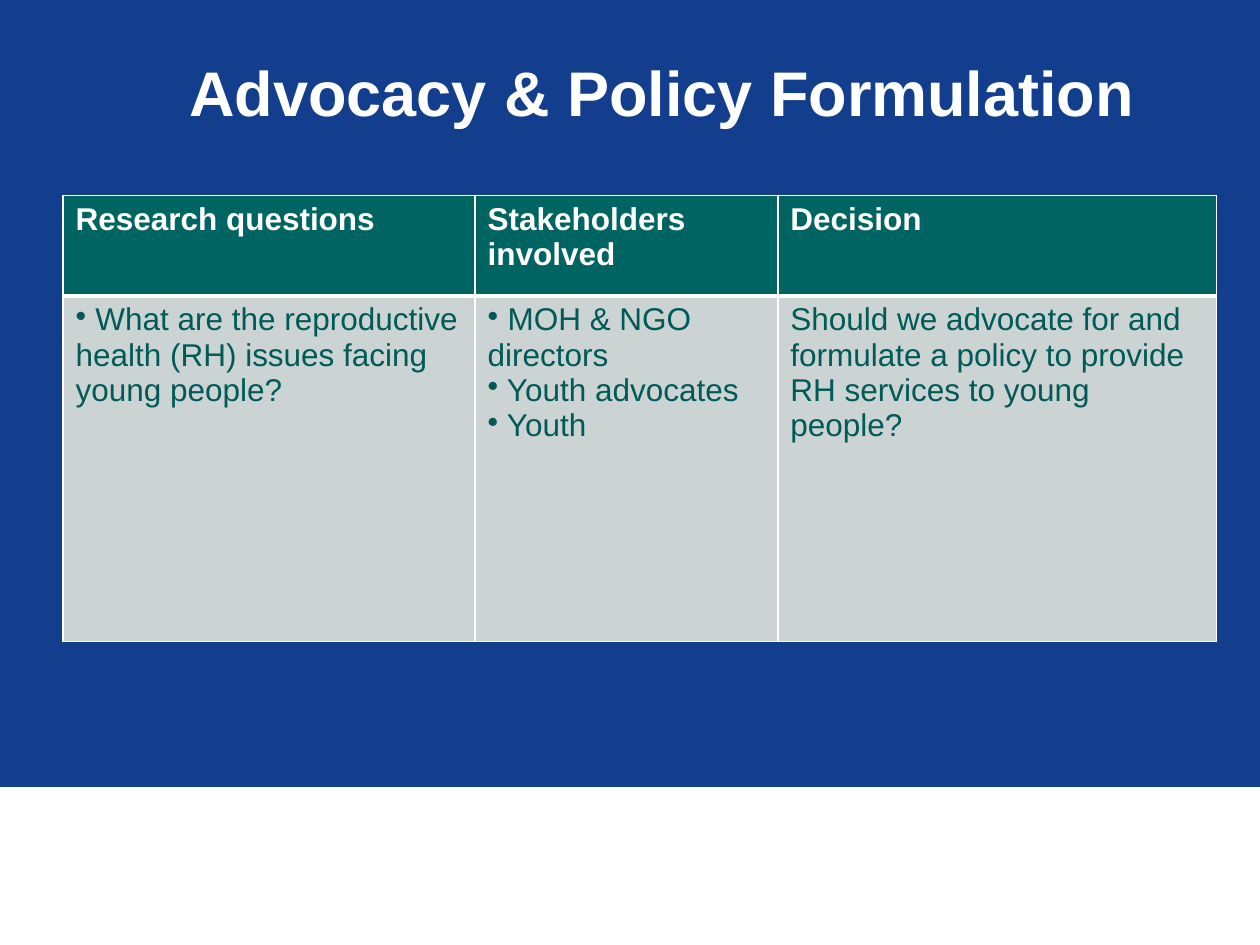
from lxml.etree import SubElement
from pptx import Presentation
from pptx.dml.color import RGBColor
from pptx.enum.shapes import MSO_SHAPE
from pptx.enum.text import MSO_ANCHOR, MSO_AUTO_SIZE, PP_ALIGN
from pptx.oxml.ns import qn
from pptx.util import Pt

BLUE = RGBColor(0x13, 0x3D, 0x8D)
WHITE = RGBColor(0xFF, 0xFF, 0xFF)
GREEN = RGBColor(0x00, 0x64, 0x62)
GRAY = RGBColor(0xCC, 0xD3, 0xD3)
DARK_GREEN = RGBColor(0x00, 0x5A, 0x58)

TITLE_FONT = {"name": "Arial", "size": Pt(36), "bold": True}
HEADER_FONT = {"name": "Arial", "size": Pt(18), "bold": True}
BODY_FONT = {"name": "Arial", "size": Pt(18), "bold": False}

COLUMN_WIDTHS = (235.5, 173, 250.8)
ROW_HEIGHTS = (57.6, 197.3)
HEADERS = ("Research questions", "Stakeholders involved", "Decision")
BODY = (
    (True, ["What are the reproductive health (RH) issues facing young people?"]),
    (True, ["MOH & NGO directors", "Youth advocates", "Youth"]),
    (False, ["Should we advocate for and formulate a policy to provide RH services to young people?"]),
)


def set_attributes(target, values):
    for name, value in values.items():
        setattr(target, name, value)


def format_font(paragraph, values, color):
    set_attributes(paragraph.font, values)
    paragraph.font.color.rgb = color


def add_footer_band(slide, left, top, width, height):
    band = slide.shapes.add_shape(
        MSO_SHAPE.RECTANGLE, Pt(left), Pt(top), Pt(width), Pt(height))
    band.shadow.inherit = False
    band.fill.solid()
    band.fill.fore_color.rgb = WHITE
    band.line.color.rgb = WHITE
    band.line.width = Pt(0.75)


def place_title(slide, left, top, width, height):
    title = slide.shapes.title
    set_attributes(title, {"left": Pt(left), "top": Pt(top),
                           "width": Pt(width), "height": Pt(height)})
    frame = title.text_frame
    frame.text = "Advocacy & Policy Formulation"
    set_attributes(frame, {"word_wrap": True, "auto_size": MSO_AUTO_SIZE.NONE,
                           "vertical_anchor": MSO_ANCHOR.MIDDLE,
                           "margin_bottom": Pt(33)})
    paragraph = frame.paragraphs[0]
    paragraph.alignment = PP_ALIGN.CENTER
    format_font(paragraph, TITLE_FONT, WHITE)


def add_borders(cell, bottom_width):
    properties = cell._tc.get_or_add_tcPr()
    widths = {"a:lnL": 1, "a:lnR": 1, "a:lnT": 1, "a:lnB": bottom_width}
    for tag, width in widths.items():
        line = SubElement(properties, qn(tag), w=str(Pt(width)))
        fill = SubElement(line, qn("a:solidFill"))
        SubElement(fill, qn("a:srgbClr"), val=str(WHITE))


def fill_cell(cell, lines, bulleted, font, color, background, bottom_width):
    add_borders(cell, bottom_width)
    cell.fill.solid()
    cell.fill.fore_color.rgb = background
    frame = cell.text_frame
    for index, text in enumerate(lines):
        paragraph = frame.add_paragraph() if index else frame.paragraphs[0]
        paragraph.text = f" {text}" if bulleted else text
        if bulleted:
            SubElement(paragraph._p.get_or_add_pPr(), qn("a:buChar"), char="•")
        format_font(paragraph, font, color)


def add_questions_table(slide, left, top, width, height):
    frame = slide.shapes.add_table(
        len(ROW_HEIGHTS), len(COLUMN_WIDTHS), Pt(left), Pt(top), Pt(width), Pt(height))
    table = frame.table
    for column, column_width in zip(table.columns, COLUMN_WIDTHS):
        column.width = Pt(column_width)
    for row, row_height in zip(table.rows, ROW_HEIGHTS):
        row.height = Pt(row_height)
    for index, (header, (bulleted, lines)) in enumerate(zip(HEADERS, BODY)):
        fill_cell(table.cell(0, index), [header], False, HEADER_FONT, WHITE, GREEN, 3)
        fill_cell(table.cell(1, index), lines, bulleted, BODY_FONT, DARK_GREEN, GRAY, 1)


def main():
    presentation = Presentation()
    presentation.slide_width = Pt(720)
    presentation.slide_height = Pt(540)
    slide = presentation.slides.add_slide(presentation.slide_layouts[5])
    slide.background.fill.solid()
    slide.background.fill.fore_color.rgb = BLUE
    add_footer_band(slide, 0, 450, 720, 90)
    place_title(slide, 72.7, 21.6, 611.3, 90)
    add_questions_table(slide, 36, 111.6, sum(COLUMN_WIDTHS), sum(ROW_HEIGHTS))
    presentation.save("out.pptx")


if __name__ == "__main__":
    main()
